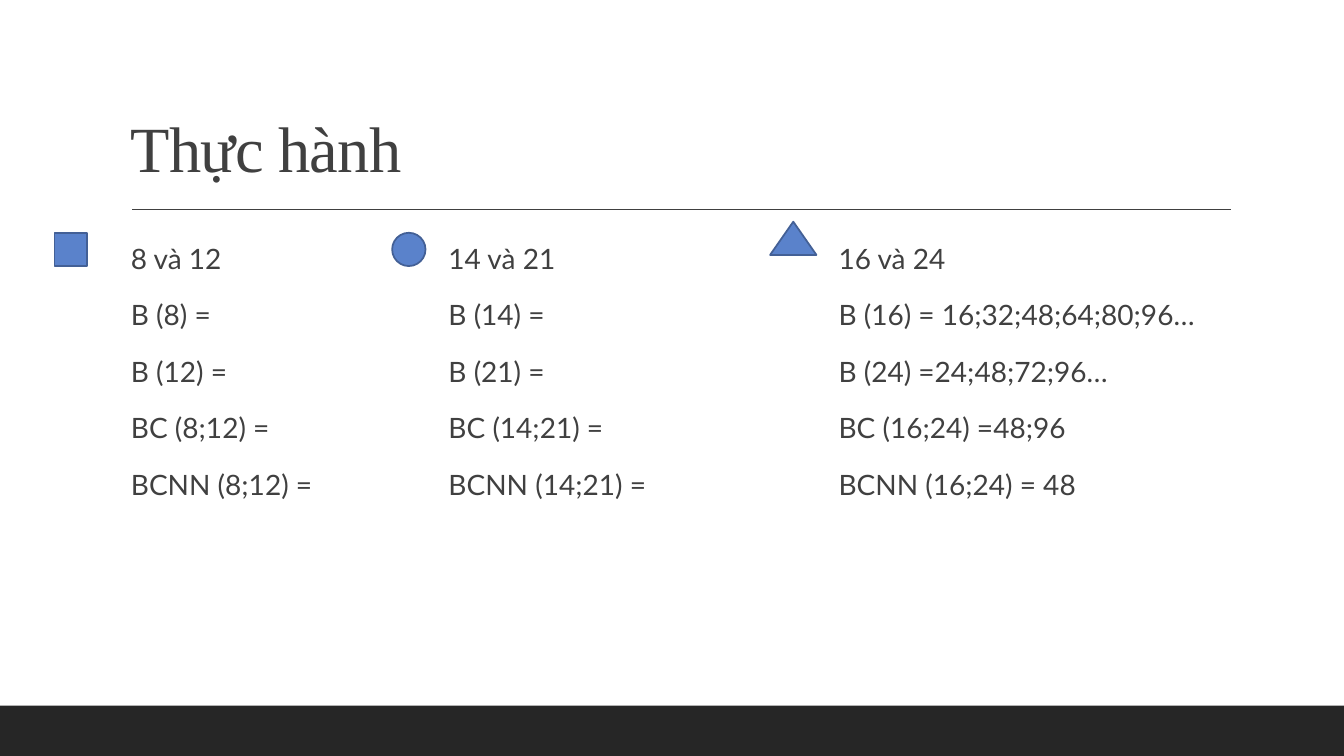
from pptx import Presentation
from pptx.dml.color import RGBColor
from pptx.enum.shapes import MSO_CONNECTOR, MSO_SHAPE
from pptx.enum.text import MSO_ANCHOR
from pptx.oxml.ns import qn
from pptx.util import Inches, Pt
from lxml.etree import SubElement

WIDTH, HEIGHT = Inches(13.33), Inches(7.5)
INK = RGBColor(0x40, 0x40, 0x40)
BAND = RGBColor(0x26, 0x26, 0x26)
BLUE = RGBColor(0x5A, 0x82, 0xCB)
BLUE_EDGE = RGBColor(0x43, 0x60, 0x96)

TITLE_FORMAT = {"line_spacing": 0.9}
BODY_FORMAT = {"line_spacing": 1.1, "space_before": Pt(12), "space_after": Pt(2)}
TITLE_FONT = {"name": "Times New Roman", "size": Pt(46)}
BODY_FONT = {"name": "Lato", "size": Pt(20)}

# Places are percentages of the slide's width and height
TEXT_TOP, TEXT_HEIGHT = 30.8, 54.8
MARK_HEIGHT = 4.4

# Each exercise: text left and width, mark shape, mark left, top and width, lines
EXERCISES = [
    (9, 23.63, MSO_SHAPE.RECTANGLE, 4.05, TEXT_TOP, 2.4,
     ["8 và 12", "B (8) =", "B (12) =", "BC (8;12) =", "BCNN (8;12) ="]),
    (32.63, 23.63, MSO_SHAPE.OVAL, 29.18, TEXT_TOP, 2.48,
     ["14 và 21", "B (14) =", "B (21) =", "BC (14;21) =", "BCNN (14;21) ="]),
    (61.65, 29.85, MSO_SHAPE.ISOSCELES_TRIANGLE, 57.3, 29.33, 3.45,
     ["16 và 24", "B (16) = 16;32;48;64;80;96…", "B (24) =24;48;72;96…",
      "BC (16;24) =48;96", "BCNN (16;24) = 48"]),
]


def place(left, top, width, height):
    return [round(share * side / 100) for share, side in
            zip((left, top, width, height), (WIDTH, HEIGHT) * 2)]


def set_all(target, values):
    for name, value in values.items():
        setattr(target, name, value)


def add_text(s, box, lines, paragraph_format, font, anchor=MSO_ANCHOR.TOP):
    tf = s.shapes.add_textbox(*place(*box)).text_frame
    tf.word_wrap = True
    tf.vertical_anchor = anchor
    for i, line in enumerate(lines):
        p = tf.add_paragraph() if i else tf.paragraphs[0]
        set_all(p, paragraph_format)
        r = p.add_run()
        r.text = line
        set_all(r.font, font)
        r.font.color.rgb = INK
    return tf


def add_filled(s, kind, box, fill, edge=None):
    sp = s.shapes.add_shape(kind, *place(*box))
    sp.shadow.inherit = False
    sp.fill.solid()
    sp.fill.fore_color.rgb = fill
    if edge is None:
        sp.line.fill.background()
    else:
        sp.line.color.rgb = edge
        sp.line.width = Pt(1.25)


def add_rule(s, left, right, y):
    x1, y1, x2, y2 = place(left, y, right, y)
    rule = s.shapes.add_connector(MSO_CONNECTOR.STRAIGHT, x1, y1, x2, y2)
    rule.line.color.rgb = INK
    rule.line.width = Pt(1)
    SubElement(rule.line._get_or_add_ln().getparent(), qn("a:effectLst"))


def main():
    prs = Presentation()
    prs.slide_width, prs.slide_height = WIDTH, HEIGHT
    s = prs.slides.add_slide(prs.slide_layouts[6])

    # Frame of the slide
    add_filled(s, MSO_SHAPE.RECTANGLE, (0, 93.33, 100, 6.67), BAND)
    add_rule(s, 9.83, 91.58, 27.73)

    # Title
    tf = add_text(s, (9, 4.13, 82.5, 21.2), ["Thực hành"],
                  TITLE_FORMAT, TITLE_FONT, MSO_ANCHOR.BOTTOM)
    tf.paragraphs[0].runs[0].font._element.set("spc", "-50")

    # Exercises, each with its mark
    for left, width, kind, mark_left, mark_top, mark_width, lines in EXERCISES:
        add_text(s, (left, TEXT_TOP, width, TEXT_HEIGHT), lines,
                 BODY_FORMAT, BODY_FONT)
        add_filled(s, kind, (mark_left, mark_top, mark_width, MARK_HEIGHT),
                   BLUE, BLUE_EDGE)

    prs.save("out.pptx")


if __name__ == "__main__":
    main()
